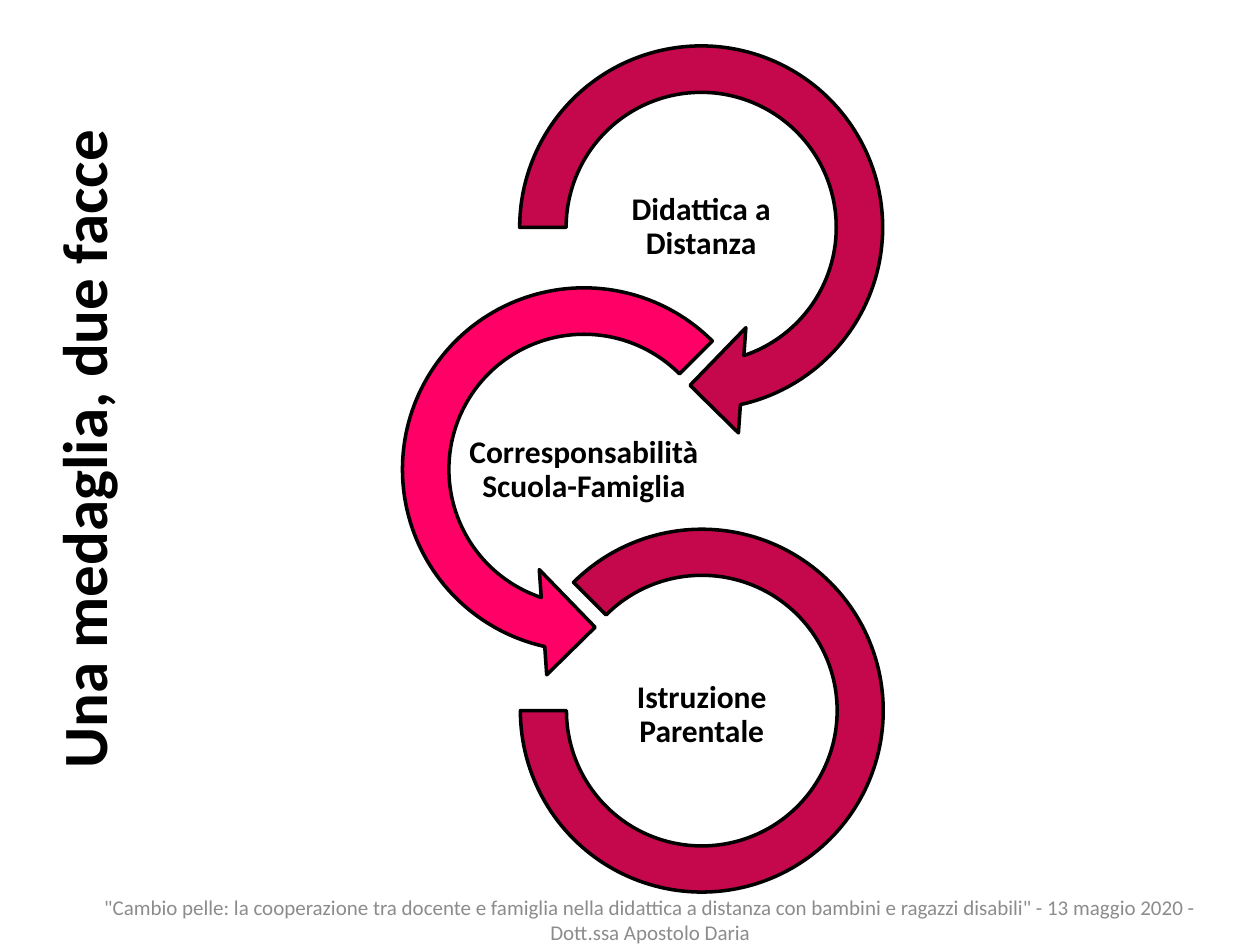
from pptx import Presentation
from pptx.dml.color import RGBColor
from pptx.enum.shapes import MSO_SHAPE as Shape
from pptx.enum.text import MSO_ANCHOR as Anchor, PP_ALIGN as Align
from pptx.util import Inches, Pt

COLORS = {"ink": "000000", "footer": "8C8C8C", "crimson": "C5074B", "pink": "FF0066"}


def rgb(name):
    return RGBColor.from_string(COLORS[name])


def write(tf, text, size=18, bold=False, color="ink", font="Calibri", spacing=None):
    tf.word_wrap = True
    tf.vertical_anchor = Anchor.MIDDLE
    p = tf.paragraphs[0]
    p.alignment = Align.CENTER
    if spacing:
        p.line_spacing = spacing
    r = p.add_run()
    r.text = text
    r.font.name = font
    r.font.size = Pt(size)
    r.font.bold = bold
    r.font.color.rgb = rgb(color)


class SlideBuilder:
    def __init__(self, slide, line_width=2):
        self.slide = slide
        self.line_width = line_width

    def text(self, box, text, rotation=0, inset=None, **fmt):
        sp = self.slide.shapes.add_textbox(*map(Inches, box))
        sp.rotation = rotation
        tf = sp.text_frame
        if inset is not None:
            tf.margin_left = tf.margin_right = Inches(inset)
            tf.margin_top = tf.margin_bottom = Inches(inset)
        write(tf, text, **fmt)

    def ring(self, kind, left, top, size, adjustments, color):
        sp = self.slide.shapes.add_shape(
            kind, Inches(left), Inches(top), Inches(size), Inches(size))
        for i, value in enumerate(adjustments):
            sp.adjustments[i] = value
        sp.shadow.inherit = False
        sp.fill.solid()
        sp.fill.fore_color.rgb = rgb(color)
        sp.line.color.rgb = rgb("ink")
        sp.line.width = Pt(self.line_width)


def main():
    prs = Presentation()
    prs.slide_width, prs.slide_height = Inches(10), Inches(7.5)
    s = SlideBuilder(prs.slides.add_slide(prs.slide_layouts[6]))

    # Vertical title and footer
    s.text((-2.7, 2.94, 6.71, 1.25), "Una medaglia, due facce",
           rotation=270, size=36, bold=True)
    s.text((0.67, 7.1, 8.98, 0.4),
           '"Cambio pelle: la cooperazione tra docente e famiglia nella didattica a '
           'distanza con bambini e ragazzi disabili" - 13 maggio 2020 - '
           'Dott.ssa Apostolo Daria', size=12, color="footer")

    # Chain of rings: shape, left, top, size, adjustments, colour, label, label top
    rings = [
        (Shape.CIRCULAR_ARROW, 3.89, 0.13, 3.35, (0.11, 11.423, 45, 108, 0.125),
         "crimson", "Didattica a Distanza", 1.34),
        (Shape.LEFT_CIRCULAR_ARROW, 2.96, 2.05, 3.35, (0.11, 11.423, 63, 189, 0.125),
         "pink", "Corresponsabilità Scuola-Famiglia", 3.27),
        (Shape.BLOCK_ARC, 4.13, 4.2, 2.88, (135, 108, 0.127),
         "crimson", "Istruzione Parentale", 5.21),
    ]
    label_w, label_h = 1.86, 0.93
    for kind, left, top, size, adjustments, color, label, label_top in rings:
        s.ring(kind, left, top, size, adjustments, color)
        label_left = left + (size - label_w) / 2
        s.text((label_left, label_top, label_w, label_h), label,
               inset=0.01, bold=True, spacing=0.9)

    prs.save("out.pptx")


if __name__ == "__main__":
    main()
